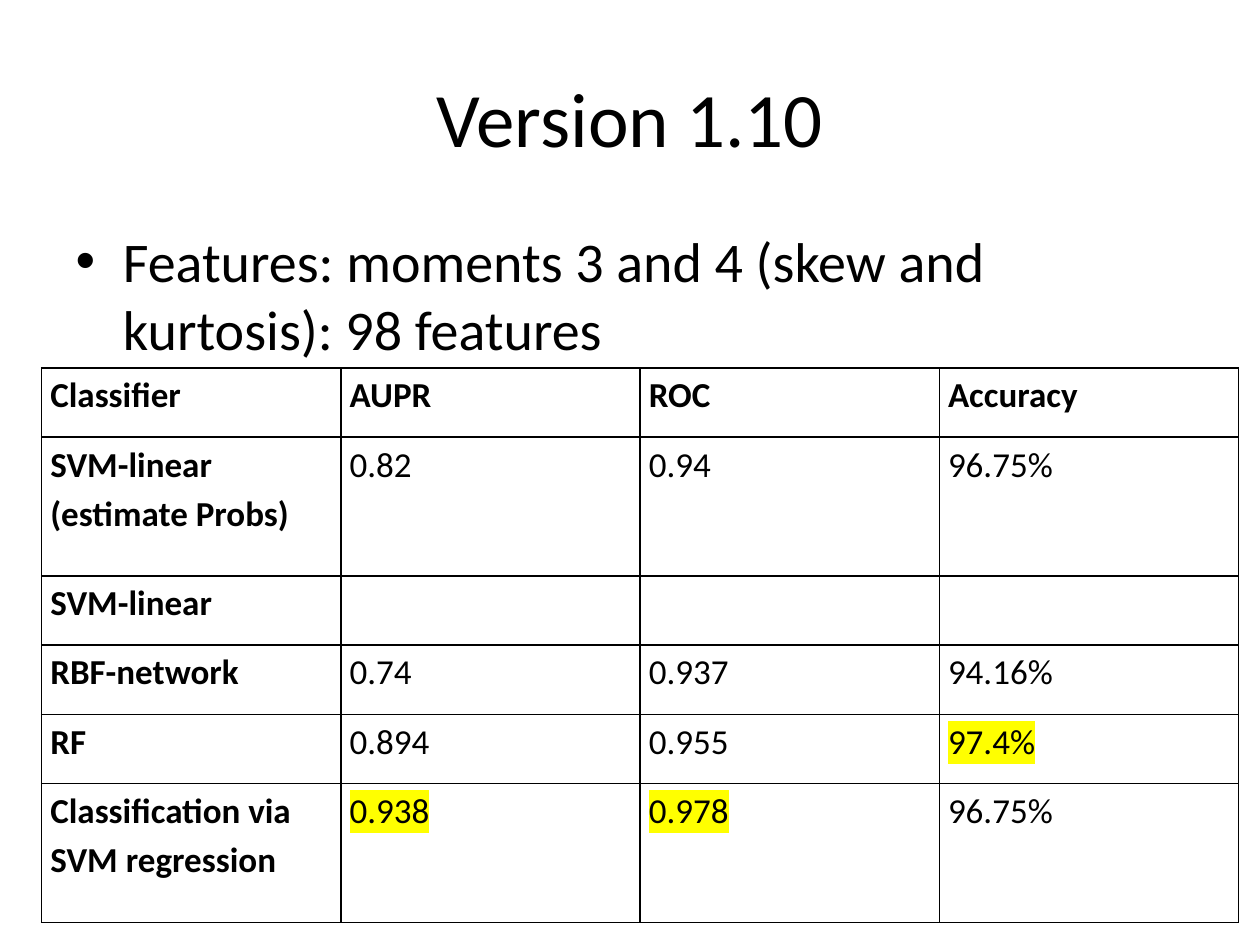
from dataclasses import dataclass

from lxml import etree
from pptx import Presentation
from pptx.dml.color import RGBColor
from pptx.enum.text import MSO_ANCHOR, PP_ALIGN
from pptx.oxml.ns import qn
from pptx.util import Inches, Pt

CENTER, LEFT = PP_ALIGN.CENTER, PP_ALIGN.LEFT
TOP, MIDDLE = MSO_ANCHOR.TOP, MSO_ANCHOR.MIDDLE


@dataclass(frozen=True)
class Theme:
    font: str = "Calibri"
    ink: str = "000000"
    paper: str = "FFFFFF"
    marker: str = "FFFF00"
    title_size: int = 44
    body_size: int = 32
    table_size: int = 20
    border: float = 1


THEME = Theme()

# Table grid: left, top, total width, height of one row unit
TABLE_LEFT, TABLE_TOP, TABLE_WIDTH, ROW_UNIT = 0.33, 2.92, 9.5, 0.55
ROW_UNITS = [1, 2, 1, 1, 1, 2]
RESULTS = [
    ["Classifier", "AUPR", "ROC", "Accuracy"],
    ["SVM-linear (estimate Probs)", "0.82", "0.94", "96.75%"],
    ["SVM-linear", "", "", ""],
    ["RBF-network", "0.74", "0.937", "94.16%"],
    ["RF", "0.894", "0.955", "97.4%"],
    ["Classification via SVM regression", "0.938", "0.978", "96.75%"],
]
BEST = {"0.938", "0.978", "97.4%"}


def add_color(parent, tag, color):
    """Append a color-holding element to an XML parent."""
    holder = etree.SubElement(parent, qn(tag))
    etree.SubElement(holder, qn("a:srgbClr"), val=color)
    return holder


def write_text(frame, text, size, bold=False, align=LEFT, spacing=None, highlight=None):
    para = frame.paragraphs[0]
    para.alignment = align
    if spacing:
        para.line_spacing = spacing
    span = para.add_run()
    span.text = text
    font = span.font
    font.name, font.size, font.bold = THEME.font, Pt(size), bold
    font.color.rgb = RGBColor.from_string(THEME.ink)
    if highlight:
        properties = span._r.get_or_add_rPr()
        mark = add_color(properties, "a:highlight", highlight)
        properties.find(qn("a:solidFill")).addnext(mark)


def fill_placeholder(box, text, place, size, anchor, align):
    box.left, box.top, box.width, box.height = map(Inches, place)
    box.text_frame.word_wrap = True
    box.text_frame.vertical_anchor = anchor
    write_text(box.text_frame, text, size, align=align)


def set_borders(cell):
    properties = cell._tc.get_or_add_tcPr()
    for index, side in enumerate(("L", "R", "T", "B")):
        line = etree.Element(qn(f"a:ln{side}"), w=str(Pt(THEME.border)))
        add_color(line, "a:solidFill", THEME.ink)
        properties.insert(index, line)


def format_cell(cell, text, bold):
    cell.margin_left = cell.margin_right = Inches(0.07)
    cell.margin_top = cell.margin_bottom = 0
    cell.vertical_anchor = TOP
    cell.fill.background()
    set_borders(cell)
    if text:
        write_text(cell.text_frame, text, THEME.table_size, bold=bold, spacing=1.15,
                   highlight=THEME.marker if text in BEST else None)


def add_results_table(page):
    place = (TABLE_LEFT, TABLE_TOP, TABLE_WIDTH, ROW_UNIT * sum(ROW_UNITS))
    table = page.shapes.add_table(len(RESULTS), len(RESULTS[0]), *map(Inches, place)).table
    table.horz_banding = False
    for row, units in zip(table.rows, ROW_UNITS):
        row.height = Inches(ROW_UNIT * units)
    for i, values in enumerate(RESULTS):
        for j, text in enumerate(values):
            # Header row and classifier column are bold
            format_cell(table.cell(i, j), text, bold=i == 0 or j == 0)


def main():
    deck = Presentation()
    deck.slide_width, deck.slide_height = Inches(10), Inches(7.5)
    page = deck.slides.add_slide(deck.slide_layouts[1])
    page.background.fill.solid()
    page.background.fill.fore_color.rgb = RGBColor.from_string(THEME.paper)

    # Title and feature bullet
    fill_placeholder(page.shapes.title, "Version 1.10", (0.5, 0.3, 9, 1.25),
                     THEME.title_size, MIDDLE, CENTER)
    fill_placeholder(page.placeholders[1],
                     "Features: moments 3 and 4 (skew and kurtosis): 98 features",
                     (0.5, 1.75, 9, 4.95), THEME.body_size, TOP, LEFT)

    # Classifier scores
    add_results_table(page)
    deck.save("out.pptx")


if __name__ == "__main__":
    main()
